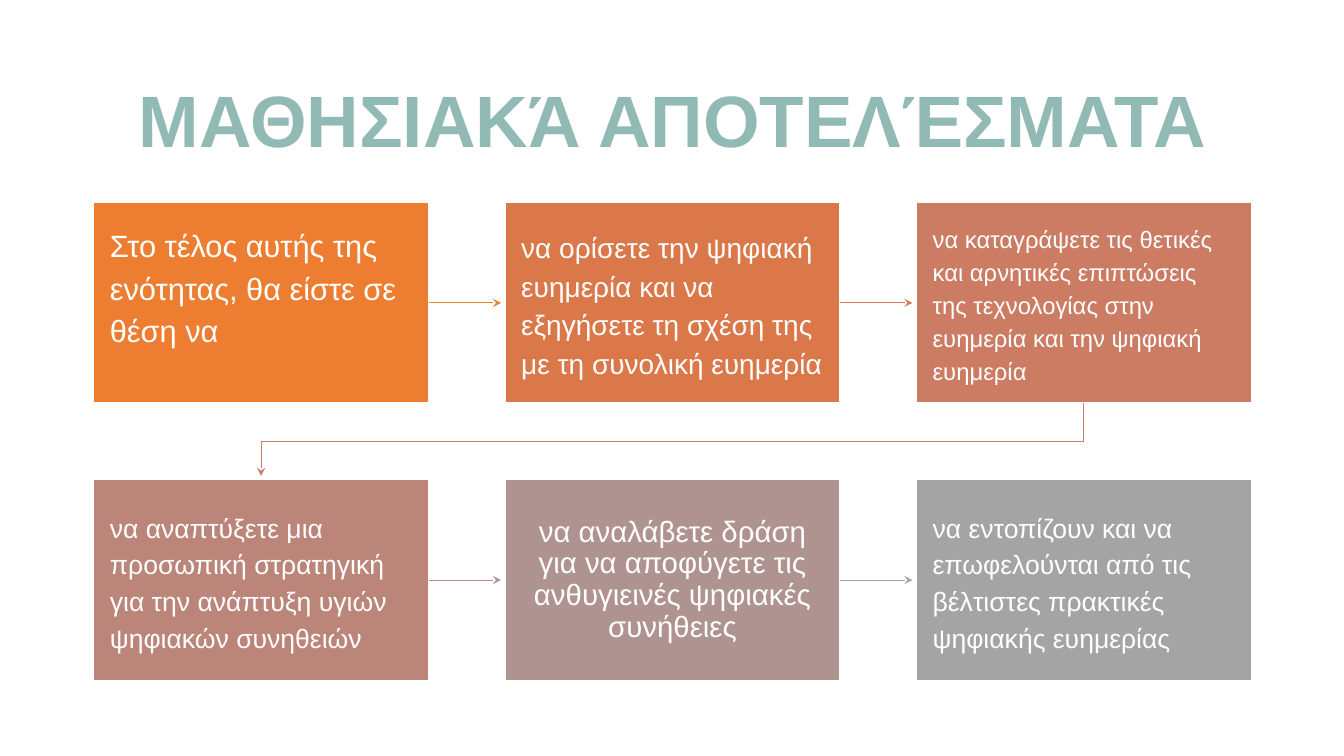
from lxml import etree
from pptx import Presentation
from pptx.dml.color import RGBColor
from pptx.enum import shapes, text
from pptx.oxml import ns
from pptx.util import Inches, Pt

# Content: wording, size, line spacing, alignment, fill, colour of the arrow that follows
TITLE = "ΜΑΘΗΣΙΑΚΆ ΑΠΟΤΕΛΈΣΜΑΤΑ"
LEFT, CENTER = text.PP_ALIGN.LEFT, text.PP_ALIGN.CENTER
OUTCOMES = [
    ("Στο τέλος αυτής της ενότητας, θα είστε σε θέση να",
     22, 1.15, LEFT, RGBColor(0xED, 0x7D, 0x31), RGBColor(0xED, 0x7D, 0x31)),
    ("να ορίσετε την ψηφιακή ευημερία και να εξηγήσετε τη σχέση της με τη συνολική ευημερία",
     20, 1.15, LEFT, RGBColor(0xDB, 0x78, 0x4A), RGBColor(0xD7, 0x78, 0x50)),
    ("να καταγράψετε τις θετικές και αρνητικές επιπτώσεις της τεχνολογίας στην ευημερία "
     "και την ψηφιακή ευημερία",
     17, 1.15, LEFT, RGBColor(0xCB, 0x7C, 0x63), RGBColor(0xC4, 0x7F, 0x6E)),
    ("να αναπτύξετε μια προσωπική στρατηγική για την ανάπτυξη υγιών ψηφιακών συνηθειών",
     19, 1.15, LEFT, RGBColor(0xBC, 0x85, 0x7A), RGBColor(0xB3, 0x8E, 0x8A)),
    ("να αναλάβετε δράση για να αποφύγετε τις ανθυγιεινές ψηφιακές συνήθειες",
     21, 0.9, CENTER, RGBColor(0xAF, 0x93, 0x90), RGBColor(0xA4, 0xA4, 0xA4)),
    ("να εντοπίζουν και να επωφελούνται από τις βέλτιστες πρακτικές ψηφιακής ευημερίας",
     19, 1.15, LEFT, RGBColor(0xA4, 0xA4, 0xA4), None),
]
TEAL = RGBColor(0x92, 0xBA, 0xB5)
WHITE = RGBColor(0xFF, 0xFF, 0xFF)
FONT = "Arial"

# Grid of cards, in inches
COLUMNS = 3
GRID_LEFT, GRID_TOP = 0.93, 2.01
CARD_W, CARD_H = 3.32, 1.99
STEP_X, STEP_Y = 4.08, 2.75
ARROW_GAP = 0.04
PAD_X, PAD_Y = 0.16, 0.17
INTRO_PAD_BOTTOM = 0.52


def card_corner(index):
    row, column = divmod(index, COLUMNS)
    return GRID_LEFT + column * STEP_X, GRID_TOP + row * STEP_Y


def style_text(frame, size, spacing, align, color, bold=False):
    frame.word_wrap = True
    frame.vertical_anchor = text.MSO_ANCHOR.MIDDLE
    paragraph = frame.paragraphs[0]
    paragraph.alignment, paragraph.line_spacing = align, spacing
    font = paragraph.runs[0].font
    font.name, font.size, font.bold = FONT, Pt(size), bold
    font.color.rgb = color


def style_arrow(arrow, color):
    arrow.line.color.rgb = color
    arrow.line.width = Pt(0.75)
    etree.SubElement(arrow.line._get_or_add_ln(), ns.qn("a:tailEnd"), type="stealth")


prs = Presentation()
prs.slide_width, prs.slide_height = Inches(13.33), Inches(7.5)
slide = prs.slides.add_slide(prs.slide_layouts[5])

# Title
title = slide.shapes.title
title.left, title.top, title.width, title.height = map(Inches, (0.92, 0.61, 11.5, 1.24))
title.text_frame.text = TITLE
style_text(title.text_frame, 52, 0.9, CENTER, TEAL, bold=True)

for index, (wording, size, spacing, align, fill, arrow_color) in enumerate(OUTCOMES):
    x, y = card_corner(index)

    # Card
    card = slide.shapes.add_shape(shapes.MSO_SHAPE.RECTANGLE,
                                  *map(Inches, (x, y, CARD_W, CARD_H)))
    card.shadow.inherit = False
    card.fill.solid()
    card.fill.fore_color.rgb = fill
    card.line.color.rgb = WHITE
    card.line.width = Pt(1)
    frame = card.text_frame
    frame.margin_left = frame.margin_right = Inches(PAD_X)
    frame.margin_top = Inches(PAD_Y)
    frame.margin_bottom = Inches(PAD_Y if index else INTRO_PAD_BOTTOM)
    frame.text = wording
    style_text(frame, size, spacing, align, WHITE)

    # Arrow to the next card
    if arrow_color is None:
        continue
    next_x, next_y = card_corner(index + 1)
    if next_y == y:
        middle = y + CARD_H / 2
        arrow = slide.shapes.add_connector(
            shapes.MSO_CONNECTOR.STRAIGHT,
            *map(Inches, (x + CARD_W, middle, next_x - ARROW_GAP, middle)))
        etree.SubElement(arrow._element.spPr, ns.qn("a:effectLst"))
    else:
        start_x, end_x = x + CARD_W / 2, next_x + CARD_W / 2
        bottom = y + CARD_H
        bend = (bottom + next_y) / 2
        route = [(start_x, bend), (end_x, bend), (end_x, next_y - ARROW_GAP)]
        builder = slide.shapes.build_freeform(Inches(start_x), Inches(bottom))
        builder.add_line_segments([(Inches(a), Inches(b)) for a, b in route], close=False)
        arrow = builder.convert_to_shape()
        arrow.shadow.inherit = False
        arrow.fill.background()
    style_arrow(arrow, arrow_color)

prs.save("out.pptx")
